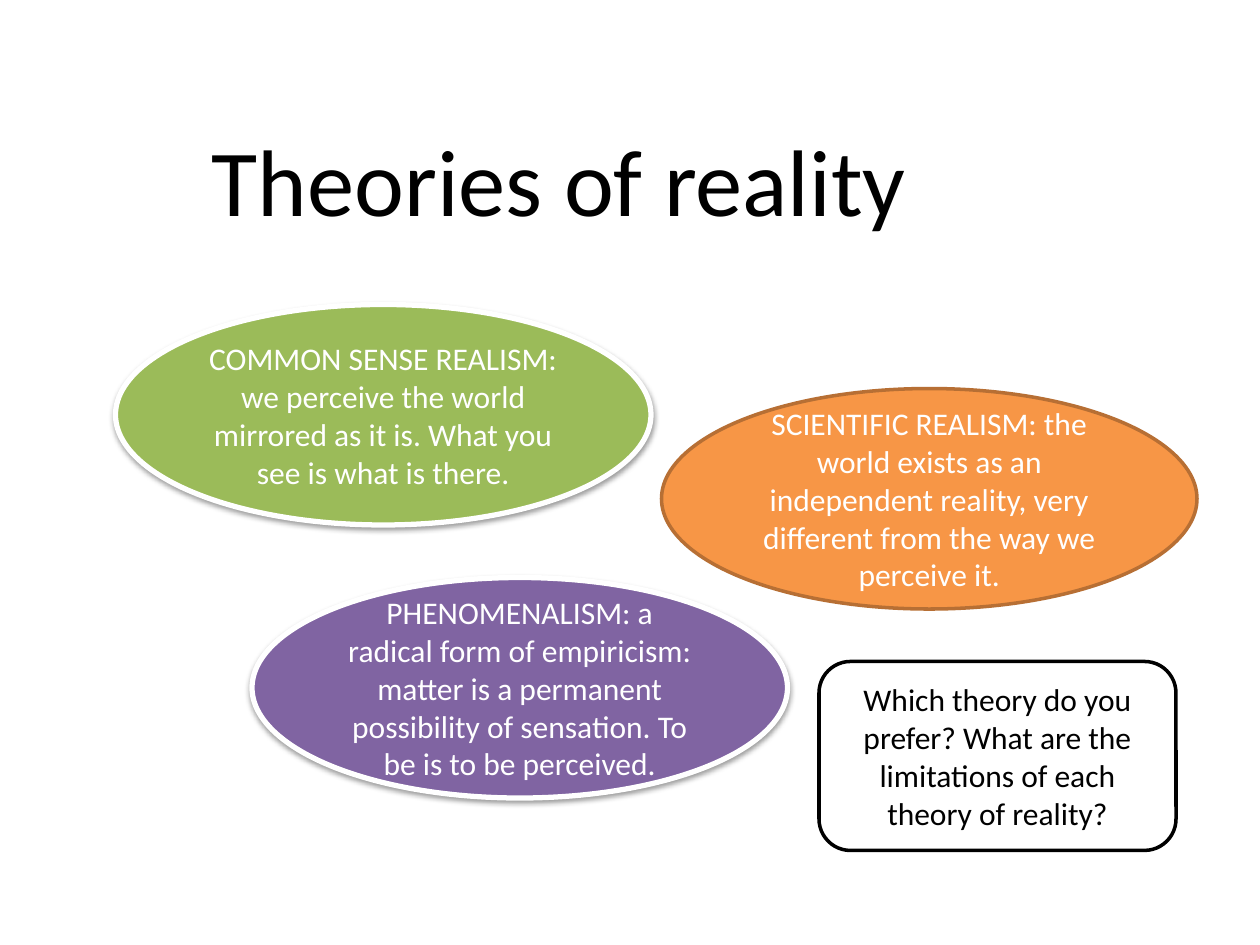
from lxml import etree
from pptx import Presentation
from pptx.dml.color import RGBColor as RGB
from pptx.enum.shapes import MSO_SHAPE as KIND
from pptx.enum.text import MSO_ANCHOR as ANCHOR, PP_ALIGN as ALIGN
from pptx.oxml import parse_xml
from pptx.oxml.ns import nsdecls
from pptx.util import Pt

PX = 914400 // 120  # 120 px to the inch
WHITE = RGB(0xFF, 0xFF, 0xFF)
BLACK = RGB(0, 0, 0)
GREEN = RGB(0x9B, 0xBB, 0x59)
PURPLE = RGB(0x80, 0x64, 0xA2)
ORANGE = RGB(0xF7, 0x96, 0x46)
BROWN = RGB(0xB7, 0x6F, 0x34)
SHADOW = (
    f'<a:effectLst {nsdecls("a")}>'
    '<a:outerShdw blurRad="40000" dist="20000" dir="5400000" rotWithShape="0">'
    '<a:srgbClr val="000000"><a:alpha val="38000"/></a:srgbClr>'
    '</a:outerShdw></a:effectLst>'
)


def write(shape, text, size, color, align):
    frame = shape.text_frame
    frame.word_wrap = True
    para = frame.paragraphs[0]
    para.alignment = align
    run = para.add_run()
    run.text = text
    run.font.color.rgb = color
    for name, value in {"name": "Calibri", "size": Pt(size)}.items():
        setattr(run.font, name, value)


deck = Presentation()
deck.slide_width, deck.slide_height = 1200 * PX, 900 * PX
slide = deck.slides.add_slide(deck.slide_layouts[6])

title = slide.shapes.add_textbox(190 * PX, 110 * PX, 800 * PX, 121 * PX)
write(title, "Theories of reality", 54, BLACK, ALIGN.LEFT)

OVAL = (KIND.OVAL, 510, 210)
CARD = (KIND.ROUNDED_RECTANGLE, 340, 180)

# form, left, top, fill, line, line width, shadow, text colour, text
items = [
    (OVAL, 110, 290, GREEN, WHITE, 3, True, WHITE,
     "COMMON SENSE REALISM: we perceive the world mirrored as it is. "
     "What you see is what is there."),
    (OVAL, 240, 550, PURPLE, WHITE, 3, True, WHITE,
     "PHENOMENALISM: a radical form of empiricism: matter is a permanent "
     "possibility of sensation. To be is to be perceived."),
    (OVAL, 630, 370, ORANGE, BROWN, 2, False, WHITE,
     "SCIENTIFIC REALISM: the world exists as an independent reality, "
     "very different from the way we perceive it."),
    (CARD, 780, 630, WHITE, BLACK, 2, False, BLACK,
     "Which theory do you prefer? What are the limitations of each "
     "theory of reality?"),
]
for (kind, wide, high), left, top, fill, line, width, shade, ink, text in items:
    shape = slide.shapes.add_shape(kind, left * PX, top * PX, wide * PX, high * PX)
    shape.fill.solid()
    shape.fill.fore_color.rgb = fill
    shape.line.color.rgb = line
    shape.line.width = Pt(width)
    if shade:
        shape._element.spPr.append(parse_xml(SHADOW))
    else:
        shape.shadow.inherit = False
    shape.text_frame.vertical_anchor = ANCHOR.MIDDLE
    write(shape, text, 18, ink, ALIGN.CENTER)

deck.save("out.pptx")
